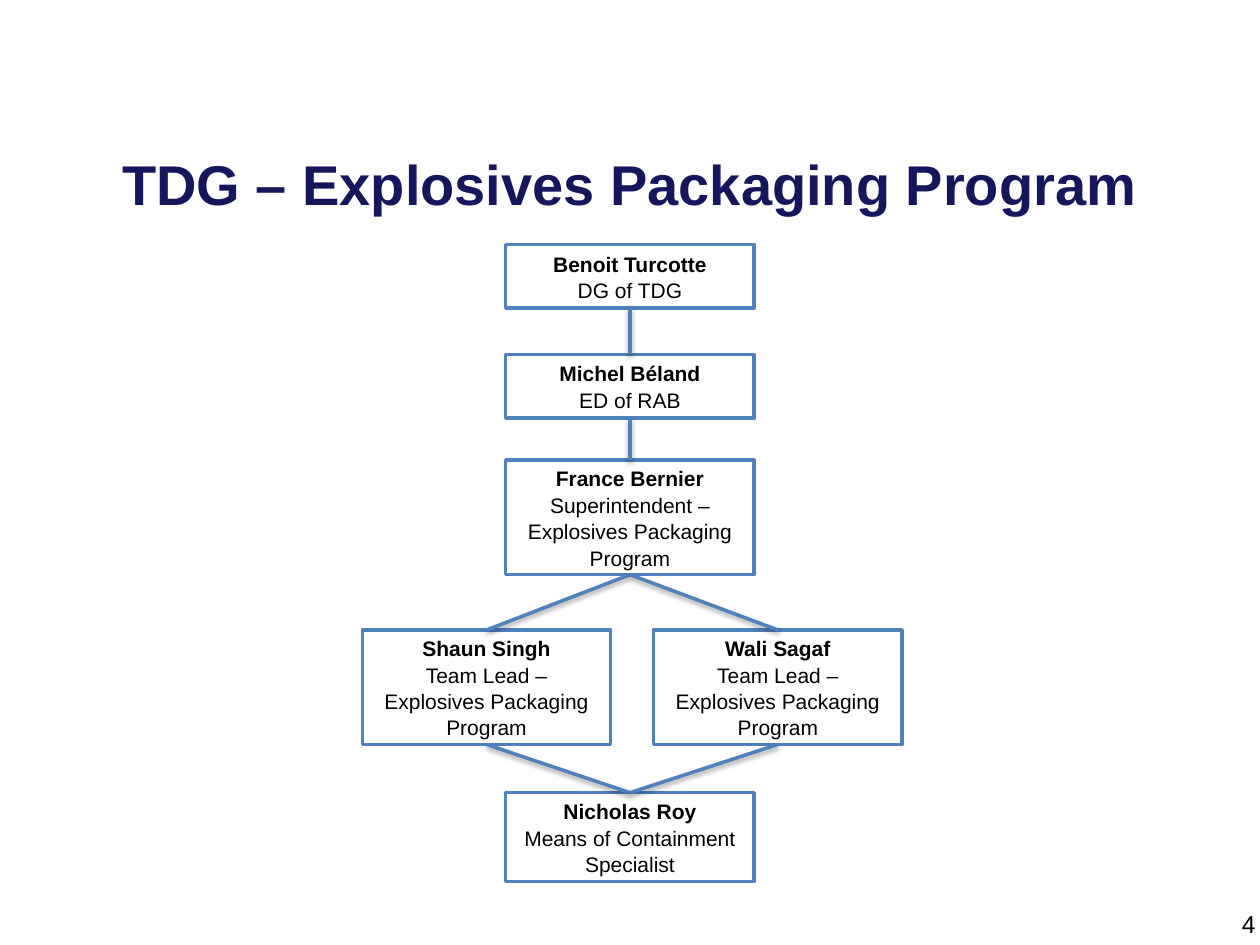
from lxml import etree
from pptx import Presentation
from pptx.dml.color import RGBColor
from pptx.enum import shapes, text
from pptx.oxml import ns
from pptx.util import Pt

COLORS = {"title": "16165D", "text": "000000", "line": "4F81BD", "box": "FFFFFF", "shadow": "000000"}
BOX_WIDTH = 142
LINE_HEIGHT = 14.55
BOX_PADDING = 7.2
BOTTOM, TOP = 2, 0

LEAD_ROLE = "Team Lead – Explosives Packaging Program"
STAFF = {
    "director": ("Benoit Turcotte", "DG of TDG", 360, 139.7, 2),
    "executive": ("Michel Béland", "ED of RAB", 360, 202.5, 2),
    "superintendent": ("France Bernier", "Superintendent – Explosives Packaging Program", 360, 263, 4),
    "right_lead": ("Wali Sagaf", LEAD_ROLE, 444.5, 360, 4),
    "left_lead": ("Shaun Singh", LEAD_ROLE, 278, 360, 4),
    "specialist": ("Nicholas Roy", "Means of Containment Specialist", 360, 453, 3),
}
LINKS = [
    ("director", "executive"),
    ("executive", "superintendent"),
    ("superintendent", "left_lead"),
    ("superintendent", "right_lead"),
    ("left_lead", "specialist"),
    ("right_lead", "specialist"),
]


def color(name):
    return RGBColor.from_string(COLORS[name])


def write(para, words, size=12, bold=False, fill="text", align=text.PP_ALIGN.CENTER, spacing=1.0):
    para.alignment = align
    para.line_spacing = spacing
    span = para.add_run()
    span.text = words
    span.font.name = "Arial"
    span.font.size = Pt(size)
    span.font.bold = bold
    span.font.color.rgb = color(fill)


def add_label(page, left, top, width, height, words, inset_top=3.6, **style):
    box = page.shapes.add_textbox(Pt(left), Pt(top), Pt(width), Pt(height))
    frame = box.text_frame
    frame.word_wrap = True
    frame.margin_top = Pt(inset_top)
    write(frame.paragraphs[0], words, **style)


def add_person(page, name, role, center, top, lines):
    height = lines * LINE_HEIGHT + BOX_PADDING
    box = page.shapes.add_shape(shapes.MSO_SHAPE.RECTANGLE, Pt(center - BOX_WIDTH / 2), Pt(top),
                                Pt(BOX_WIDTH), Pt(height))
    box.shadow.inherit = False
    box.fill.solid()
    box.fill.fore_color.rgb = color("box")
    box.line.color.rgb = color("line")
    box.line.width = Pt(2)
    frame = box.text_frame
    frame.word_wrap = True
    frame.vertical_anchor = text.MSO_ANCHOR.MIDDLE
    write(frame.paragraphs[0], name, bold=True, spacing=1.05)
    write(frame.add_paragraph(), role, spacing=1.05)
    return box


def add_shadow(shape):
    effects = etree.SubElement(shape._element.spPr, ns.qn("a:effectLst"))
    shadow = etree.SubElement(effects, ns.qn("a:outerShdw"), blurRad=str(Pt(3.1)), dist=str(Pt(1.6)),
                              dir="5400000", rotWithShape="0")
    tint = etree.SubElement(shadow, ns.qn("a:srgbClr"), val=COLORS["shadow"])
    etree.SubElement(tint, ns.qn("a:alpha"), val="38000")


def add_link(page, upper, lower):
    link = page.shapes.add_connector(shapes.MSO_CONNECTOR.STRAIGHT, 0, 0, 0, 0)
    link.begin_connect(upper, BOTTOM)
    link.end_connect(lower, TOP)
    link.line.color.rgb = color("line")
    link.line.width = Pt(2)
    add_shadow(link)


def add_chart_of_staff(page):
    boxes = {key: add_person(page, *person) for key, person in STAFF.items()}
    for upper, lower in LINKS:
        add_link(page, boxes[upper], boxes[lower])


def main():
    deck = Presentation()
    deck.slide_width, deck.slide_height = Pt(720), Pt(540)
    page = deck.slides.add_slide(deck.slide_layouts[6])
    add_label(page, 54, 78, 612, 90, "TDG – Explosives Packaging Program",
              inset_top=7.2, size=32, bold=True, fill="title")
    add_label(page, 574.5, 516, 150, 36, "4", size=14, align=text.PP_ALIGN.RIGHT)
    add_chart_of_staff(page)
    deck.save("out.pptx")


if __name__ == "__main__":
    main()
